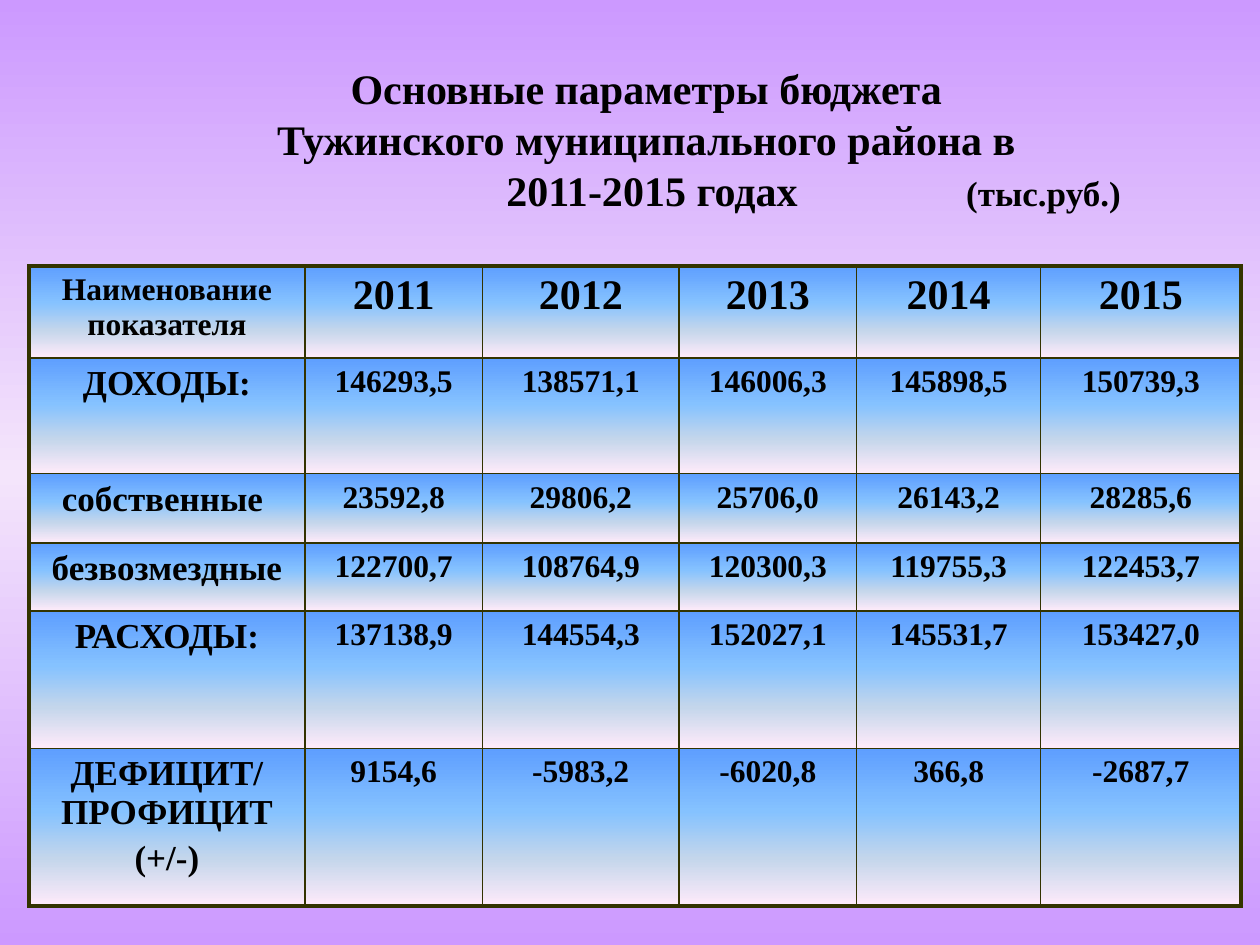
from lxml.etree import SubElement
from pptx import Presentation
from pptx.dml.color import RGBColor
from pptx.enum.text import MSO_ANCHOR, PP_ALIGN
from pptx.oxml.ns import qn
from pptx.util import Inches, Pt

COLORS = {
    "text": "000000", "border": "333300", "violet": "CC99FF", "lilac": "F4E5FB",
    "blue": "5E9EFF", "sky": "85C2FF", "mist": "C4D6EB", "pink": "FFEBFA",
}
PAGE_GRADIENT = {0: "violet", 50: "lilac", 100: "violet"}
CELL_GRADIENT = {0: "blue", 40: "sky", 70: "mist", 100: "pink"}

COLUMN_WIDTHS = [2.19, 1.41, 1.56, 1.41, 1.46, 1.59]
ROW_HEIGHTS = [0.73, 0.92, 0.55, 0.54, 1.09, 1.25]
BUDGET = [
    ["Наименование показателя", "2011", "2012", "2013", "2014", "2015"],
    ["ДОХОДЫ:", "146293,5", "138571,1", "146006,3", "145898,5", "150739,3"],
    ["собственные ", "23592,8", "29806,2", "25706,0", "26143,2", "28285,6"],
    ["безвозмездные", "122700,7", "108764,9", "120300,3", "119755,3", "122453,7"],
    ["РАСХОДЫ:", "137138,9", "144554,3", "152027,1", "145531,7", "153427,0"],
    ["ДЕФИЦИТ/ ПРОФИЦИТ\n(+/-)", "9154,6", "-5983,2", "-6020,8", "366,8", "-2687,7"],
]


def write_text(para, text, size=18, align=PP_ALIGN.CENTER, font="Times New Roman",
               color="text", bold=True):
    para.alignment = align
    span = para.add_run()
    span.text = text
    span.font.size = Pt(size)
    span.font.name = font
    span.font.bold = bold
    span.font.color.rgb = RGBColor.from_string(COLORS[color])


class SlideBuilder:
    """Holds the style and the current slide and adds elements to it."""

    thin = 1
    thick = 2.25

    def __init__(self, page):
        self.page = page

    def gradient(self, fill, element, stops):
        fill.gradient()
        fill.gradient_angle = 270
        stop_list = next(element.iter(qn("a:gsLst")))
        for stop in list(stop_list):
            stop_list.remove(stop)
        for percent, name in stops.items():
            stop = SubElement(stop_list, qn("a:gs"), pos=str(percent * 1000))
            SubElement(stop, qn("a:srgbClr"), val=COLORS[name])

    def background(self, stops):
        self.gradient(self.page.background.fill, self.page.element, stops)

    def title(self, lines, left, top, width, height):
        box = self.page.shapes.add_textbox(
            Inches(left), Inches(top), Inches(width), Inches(height))
        frame = box.text_frame
        frame.word_wrap = True
        frame.vertical_anchor = MSO_ANCHOR.MIDDLE
        for index, line in enumerate(lines):
            para = frame.paragraphs[0] if index == 0 else frame.add_paragraph()
            para.line_spacing = Pt(29)
            write_text(para, line, size=24)
        return para

    def tabbed_line(self, para, parts):
        para.clear()
        tab_list = SubElement(para._p.get_or_add_pPr(), qn("a:tabLst"))
        for text, size, position in parts:
            SubElement(tab_list, qn("a:tab"), pos=str(Inches(position)), algn="l")
            write_text(para, "\t" + text, size=size, align=PP_ALIGN.LEFT)

    def borders(self, cell, outer_sides):
        properties = cell._tc.get_or_add_tcPr()
        for index, side in enumerate("LRTB"):
            width = self.thick if side in outer_sides else self.thin
            line = SubElement(properties, qn("a:ln" + side), w=str(Pt(width)))
            fill = SubElement(line, qn("a:solidFill"))
            SubElement(fill, qn("a:srgbClr"), val=COLORS["border"])
            properties.insert(index, line)

    def cell(self, cell, text, size, outer_sides):
        frame = cell.text_frame
        for index, line in enumerate(text.split("\n")):
            para = frame.paragraphs[0] if index == 0 else frame.add_paragraph()
            write_text(para, line, size=size)
            before = SubElement(para._p.get_or_add_pPr(), qn("a:spcBef"))
            SubElement(before, qn("a:spcPct"), val="20000")
        self.gradient(cell.fill, cell._tc, CELL_GRADIENT)
        self.borders(cell, outer_sides)

    def table(self, rows, widths, heights, left, top):
        table = self.page.shapes.add_table(
            len(rows), len(widths), Inches(left), Inches(top),
            Inches(sum(widths)), Inches(sum(heights))).table
        table.first_row = table.horz_banding = False
        for column, width in zip(table.columns, widths):
            column.width = Inches(width)
        last_row, last_column = len(rows) - 1, len(widths) - 1
        for r, values in enumerate(rows):
            table.rows[r].height = Inches(heights[r])
            for c, text in enumerate(values):
                edges = {"L": c == 0, "R": c == last_column,
                         "T": r == 0, "B": r == last_row}
                outer_sides = [side for side, outer in edges.items() if outer]
                if r == 0:
                    size = 24 if c else 18
                else:
                    size = 18 if c else 20
                self.cell(table.cell(r, c), text, size, outer_sides)


def main():
    deck = Presentation()
    deck.slide_width, deck.slide_height = Inches(10), Inches(7.5)
    builder = SlideBuilder(deck.slides.add_slide(deck.slide_layouts[6]))
    builder.background(PAGE_GRADIENT)
    last_line = builder.title(
        ["Основные параметры бюджета", "Тужинского муниципального района в", ""],
        0.43, 0.25, 9.4, 1.7)
    builder.tabbed_line(
        last_line, [("2011-2015 годах", 24, 3.49), ("(тыс.руб.)", 20, 7.14)])
    builder.table(BUDGET, COLUMN_WIDTHS, ROW_HEIGHTS, 0.23, 2.11)
    deck.save("out.pptx")


if __name__ == "__main__":
    main()
